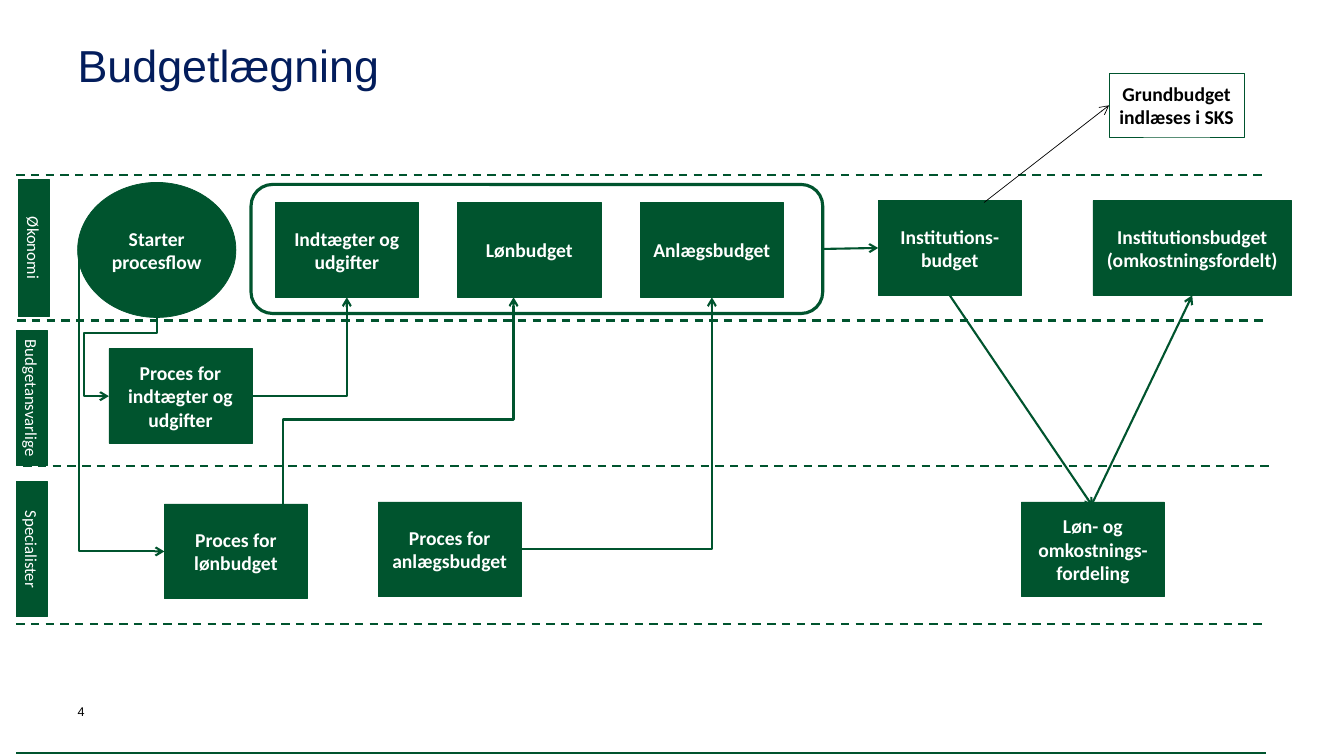
from dataclasses import dataclass

from pptx import Presentation
from pptx.dml.color import RGBColor
from pptx.enum.dml import MSO_LINE
from pptx.enum.shapes import MSO_CONNECTOR, MSO_SHAPE
from pptx.enum.text import MSO_ANCHOR, MSO_AUTO_SIZE, PP_ALIGN
from pptx.oxml.ns import qn
from pptx.util import Inches, Pt
from lxml import etree

RECT, OVAL, ROUNDED = MSO_SHAPE.RECTANGLE, MSO_SHAPE.OVAL, MSO_SHAPE.ROUNDED_RECTANGLE
STRAIGHT, ELBOW = MSO_CONNECTOR.STRAIGHT, MSO_CONNECTOR.ELBOW
MIDDLE, TOP = MSO_ANCHOR.MIDDLE, MSO_ANCHOR.TOP
LEFT, CENTER = PP_ALIGN.LEFT, PP_ALIGN.CENTER
DASH, NO_AUTOFIT = MSO_LINE.DASH, MSO_AUTO_SIZE.NONE


@dataclass(frozen=True)
class Theme:
    green: RGBColor = RGBColor(0x00, 0x54, 0x2E)
    navy: RGBColor = RGBColor(0x03, 0x1D, 0x5C)
    white: RGBColor = RGBColor(0xFF, 0xFF, 0xFF)
    black: RGBColor = RGBColor(0x00, 0x00, 0x00)
    heading: str = "Arial"
    body: str = "Calibri"
    title_size: int = 32
    node_size: int = 14
    lane_size: int = 12
    number_size: int = 9
    thin: float = 0.5
    normal: float = 1.5
    thick: float = 2.25


@dataclass(frozen=True)
class Box:
    left: float
    top: float
    width: float
    height: float

    def inner(self, dx, dy, width, height):
        return Box(self.left + dx, self.top + dy, width, height)

    def emu(self):
        return [Inches(v) for v in (self.left, self.top, self.width, self.height)]


THEME = Theme()
PAGE = Box(0, 0, 13.33, 7.5)
LANE_LEFT, LANE_WIDTH = 0.16, 12.4
NODE_W, NODE_H = 1.42, 0.94
BUDGET_PITCH = 1.81


def add_run(paragraph, text, font, size, color, bold=False):
    run = paragraph.add_run()
    run.text = text
    run.font.name, run.font.size, run.font.bold = font, Pt(size), bold
    run.font.color.rgb = color


def clear_margins(frame):
    frame.margin_left = frame.margin_right = frame.margin_top = frame.margin_bottom = 0


def add_node(slide, box, text="", kind=RECT, fill=THEME.green, color=THEME.white,
             size=THEME.node_size, bold=True, weight=THEME.thin):
    node = slide.shapes.add_shape(kind, *box.emu())
    node.shadow.inherit = False
    if fill is None:
        node.fill.background()
    else:
        node.fill.solid()
        node.fill.fore_color.rgb = fill
    node.line.color.rgb = THEME.green
    node.line.width = Pt(weight)
    if text:
        frame = node.text_frame
        frame.word_wrap = True
        frame.vertical_anchor = MIDDLE
        frame.paragraphs[0].alignment = CENTER
        add_run(frame.paragraphs[0], text, THEME.body, size, color, bold)
    return node


def style_line(line, color=THEME.green, weight=THEME.normal, arrow=False):
    line.line.color.rgb = color
    line.line.width = Pt(weight)
    if arrow:
        etree.SubElement(line.line._get_or_add_ln(), qn("a:tailEnd"), type="arrow")
    etree.SubElement(line._element.spPr, qn("a:effectLst"))


def rule(slide, left, y, dashed=True):
    line = slide.shapes.add_connector(
        STRAIGHT, Inches(left), Inches(y), Inches(left + LANE_WIDTH), Inches(y))
    if dashed:
        line.line.dash_style = DASH
    style_line(line)


def point(shape, across, down):
    """A point at the given shares of a shape's width and height."""
    return (int(shape.left + across * shape.width), int(shape.top + down * shape.height))


def arrow(slide, start, end, **style):
    line = slide.shapes.add_connector(STRAIGHT, *start, *end)
    style_line(line, arrow=True, **style)


def elbow(slide, start, end, bends, down_first=False, adjust=()):
    dx, dy = end[0] - start[0], end[1] - start[1]
    mid_x, mid_y = (start[0] + end[0]) // 2, (start[1] + end[1]) // 2
    # A connector that leaves vertically is a horizontal one turned 90 degrees
    u, v = (dy, -dx) if down_first else (dx, dy)
    left, top = mid_x - u // 2, mid_y - v // 2
    line = slide.shapes.add_connector(ELBOW, left, top, left + u, top + v)
    properties = line._element.spPr
    if down_first:
        properties.find(qn("a:xfrm")).set("rot", "5400000")
    geometry = properties.find(qn("a:prstGeom"))
    geometry.set("prst", f"bentConnector{bends + 1}")
    guides = geometry.find(qn("a:avLst"))
    for number, share in enumerate(adjust, 1):
        etree.SubElement(guides, qn("a:gd"), name=f"adj{number}",
                         fmla=f"val {round(share * 100000)}")
    style_line(line, arrow=True)


def add_title(slide, box):
    title = slide.shapes.title
    title.left, title.top, title.width, title.height = box.emu()
    frame = title.text_frame
    frame.auto_size, frame.word_wrap, frame.vertical_anchor = NO_AUTOFIT, True, TOP
    clear_margins(frame)
    frame.margin_right = Inches(1.13)
    paragraph = frame.paragraphs[0]
    paragraph.alignment, paragraph.line_spacing = LEFT, 0.9
    add_run(paragraph, "Budgetlægning", THEME.heading, THEME.title_size, THEME.navy)


def add_footer(slide, box):
    frame = slide.shapes.add_textbox(*box.inner(0.77, 0, 0.31, 0.39).emu()).text_frame
    frame.word_wrap = True
    clear_margins(frame)
    add_run(frame.paragraphs[0], "4", THEME.heading, THEME.number_size, THEME.black)
    rule(slide, LANE_LEFT, box.top + 0.49, dashed=False)


def add_lane(slide, box, label, label_box, nodes, rule_shift=0):
    """A swimlane: upper rule, upright label and nodes as (text, dx, dy, width)."""
    rule(slide, box.left + rule_shift, box.top)
    tag = add_node(slide, box.inner(*label_box), label, size=THEME.lane_size, bold=False)
    tag.text_frame._txBody.bodyPr.set("vert", "vert")
    clear_margins(tag.text_frame)
    return [add_node(slide, box.inner(dx, dy, width, NODE_H), text)
            for text, dx, dy, width in nodes]


def add_flow(slide, economy, managers, specialists):
    # Economy lane
    budgets = ("Indtægter og udgifter", "Lønbudget", "Anlægsbudget")
    economy_nodes = [(text, 2.57 + i * BUDGET_PITCH, 0.27, NODE_W)
                     for i, text in enumerate(budgets)]
    economy_nodes += [("Institutions-budget", 8.55, 0.25, NODE_W),
                      ("Institutionsbudget (omkostningsfordelt)", 10.68, 0.25, 1.97)]
    income, wages, assets, institution, distributed = add_lane(
        slide, economy, "Økonomi", (0.02, 0.04, 0.31, 1.36), economy_nodes)
    starter = add_node(slide, economy.inner(0.61, 0.07, 1.57, 1.34),
                       "Starter procesflow", OVAL)
    budget_frame = add_node(slide, economy.inner(2.33, 0.09, 5.67, 1.28),
                            kind=ROUNDED, fill=None, weight=THEME.thick)

    # Lanes of the budget managers and the specialists
    income_process, = add_lane(
        slide, managers, "Budgetansvarlige", (0, 0.1, 0.31, 1.34),
        [("Proces for indtægter og udgifter", 0.92, 0.28, NODE_W)], 0.01)
    wage_process, asset_process, allocation = add_lane(
        slide, specialists, "Specialister", (0, 0.16, 0.31, 1.34),
        [("Proces for lønbudget", 1.47, 0.38, NODE_W),
         ("Proces for anlægsbudget", 3.59, 0.36, NODE_W),
         ("Løn- og omkostnings-fordeling", 9.97, 0.36, NODE_W)], 0.07)
    rule(slide, specialists.left, specialists.top + specialists.height)

    # Target outside the lanes
    base_budget = add_node(slide, economy.inner(10.84, -1.01, 1.34, 0.63),
                           "Grundbudget indlæses i SKS", fill=None, color=THEME.black)

    # Bent arrows from the start and from the processes
    elbow(slide, point(starter, 0.5, 1), point(income_process, 0, 0.5), 3, True,
          (0.198, 1.525))
    elbow(slide, point(starter, 0.01, 0.5), point(wage_process, 0, 0.5), 1, True)
    elbow(slide, point(wage_process, 0.83, 0.4), point(wages, 0.39, 1), 2, True, (0.5,))
    for process, budget in ((income_process, income), (asset_process, assets)):
        elbow(slide, point(process, 1, 0.5), point(budget, 0.5, 1), 1)

    # Straight arrows
    arrow(slide, point(budget_frame, 1, 0.5), point(institution, 0, 0.5))
    arrow(slide, point(institution, 0.5, 1), point(allocation, 0.5, 0.05))
    arrow(slide, point(allocation, 0.5, 0), point(distributed, 0.5, 1))
    arrow(slide, point(institution, 0.74, 0.02), point(base_budget, 0, 0.5),
          color=THEME.black, weight=THEME.thin)


def main():
    deck = Presentation()
    deck.slide_width, deck.slide_height = Inches(PAGE.width), Inches(PAGE.height)
    slide = deck.slides.add_slide(deck.slide_layouts[5])
    add_title(slide, PAGE.inner(0.77, 0.43, 11.8, 1.02))
    add_flow(slide,
             Box(LANE_LEFT, 1.74, LANE_WIDTH, 1.44),
             Box(LANE_LEFT, 3.18, LANE_WIDTH, 1.44),
             Box(LANE_LEFT, 4.62, LANE_WIDTH, 1.57))
    add_footer(slide, PAGE.inner(0, 6.98, PAGE.width, 0.52))
    deck.save("out.pptx")


if __name__ == "__main__":
    main()
